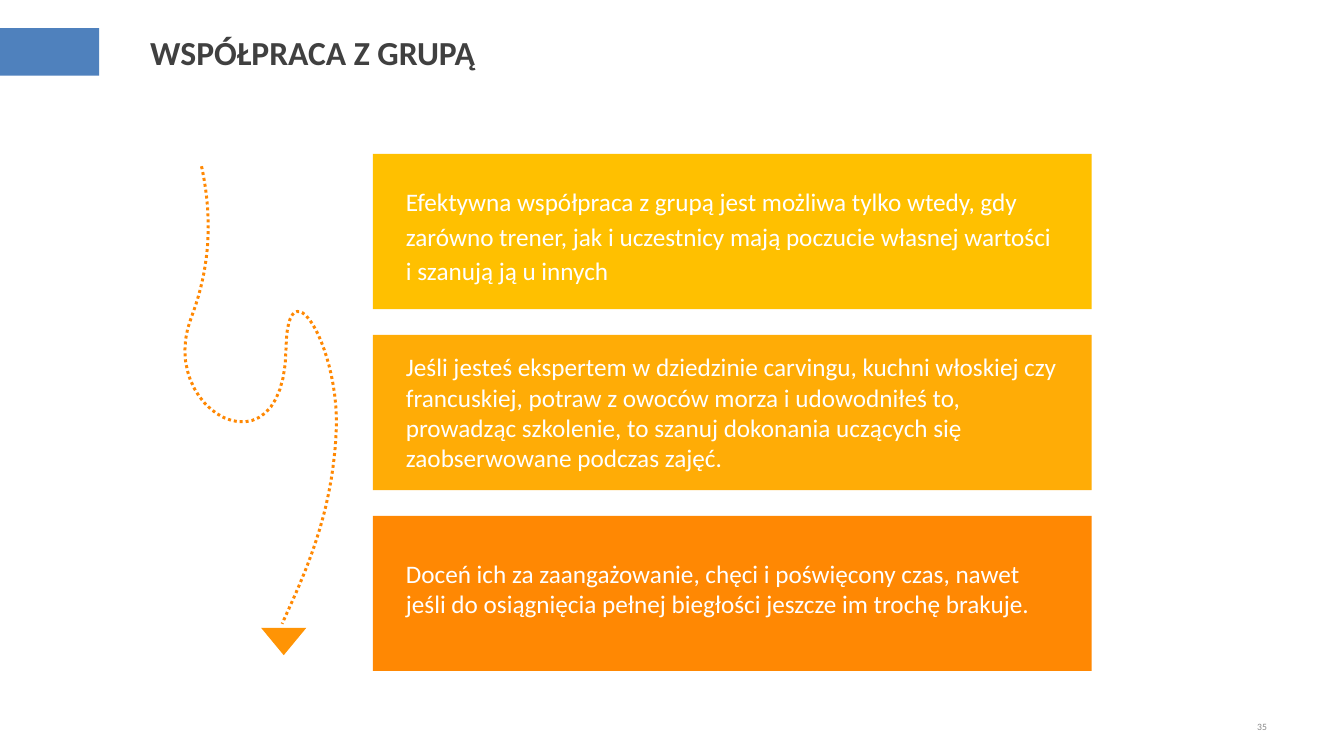
from dataclasses import dataclass

from pptx import Presentation
from pptx import util as u
from pptx.dml.color import RGBColor
from pptx.enum import dml, shapes, text


@dataclass(frozen=True)
class Theme:
    face: str = "Calibri"
    blue: str = "4F81BD"
    dark: str = "404040"
    gray: str = "898989"
    white: str = "FFFFFF"
    curve: str = "FF8803"
    tip: str = "FF9405"
    cards: tuple = ("FFC000", "FFAC06", "FF8803")
    head: int = 24
    body: int = 18
    small: int = 12


THEME = Theme()

NOTES = [
    (4.47, 2.84, 1.14, 6,
     "Efektywna współpraca z grupą jest możliwa tylko wtedy, gdy zarówno trener, "
     "jak i uczestnicy mają poczucie własnej wartości i szanują ją u innych"),
    (8.74, 3.33, 1.0, 12,
     "Jeśli jesteś ekspertem w dziedzinie carvingu, kuchni włoskiej czy francuskiej, "
     "potraw z owoców morza i udowodniłeś to, prowadząc szkolenie, to szanuj dokonania "
     "uczących się zaobserwowane podczas zajęć."),
    (13.94, 1.8, 1.0, 12,
     "Doceń ich za zaangażowanie, chęci i poświęcony czas, nawet jeśli do osiągnięcia "
     "pełnej biegłości jeszcze im trochę brakuje."),
]

START = (5.08, 4.19)
BENDS = [
    ((5.28, 5.11), (5.41, 6.45), (4.83, 7.98)),
    ((3.89, 10.34), (7.16, 12.14), (7.21, 8.79)),
    ((7.24, 6.6), (8.51, 8.64), (8.48, 10.72)),
    ((8.41, 13), (7.62, 14.58), (7.11, 15.72)),
]
STEPS = 24


def style(para, size, color, bold=False):
    font = para.font
    font.name = THEME.face
    font.size = u.Pt(size)
    font.bold = bold
    font.color.rgb = RGBColor.from_string(color)


def add_block(slide, kind, box, color):
    block = slide.shapes.add_shape(kind, *map(u.Cm, box))
    block.shadow.inherit = False
    block.fill.solid()
    block.fill.fore_color.rgb = RGBColor.from_string(color)
    block.line.fill.background()
    return block


def add_text(slide, box, words, size, color):
    frame = slide.shapes.add_textbox(*map(u.Cm, box)).text_frame
    frame.word_wrap = True
    para = frame.paragraphs[0]
    para.text = words
    style(para, size, color)
    return frame


def set_title(slide, box, words):
    title = slide.shapes.title
    title.left, title.top, title.width, title.height = map(u.Cm, box)
    frame = title.text_frame
    frame.vertical_anchor = text.MSO_ANCHOR.MIDDLE
    para = frame.paragraphs[0]
    para.text = words
    para.alignment = text.PP_ALIGN.LEFT
    style(para, THEME.head, THEME.dark, bold=True)


def add_note(slide, top, height, lead, after, words):
    frame = add_text(slide, (9.98, top, 16.94, height), words, THEME.body, THEME.white)
    frame.auto_size = text.MSO_AUTO_SIZE.SHAPE_TO_FIT_TEXT
    para = frame.paragraphs[0]
    para.line_spacing = lead
    para.space_after = u.Pt(after)


def add_number(slide, words):
    frame = add_text(slide, (24.28, 17.65, 7.9, 1.02), words, THEME.small, THEME.gray)
    frame.vertical_anchor = text.MSO_ANCHOR.MIDDLE
    para = frame.paragraphs[0]
    para.alignment = text.PP_ALIGN.RIGHT
    para.runs[0]._r.get_or_add_rPr().set("baseline", "-25000")


def bend(start, first, second, end):
    for step in range(1, STEPS + 1):
        t = step / STEPS
        s = 1 - t
        yield tuple(
            u.Cm(s**3 * a + 3 * s * s * t * b + 3 * s * t * t * c + t**3 * d)
            for a, b, c, d in zip(start, first, second, end)
        )


def add_curve(slide):
    path = slide.shapes.build_freeform(*map(u.Cm, START))
    start = START
    for first, second, end in BENDS:
        path.add_line_segments(bend(start, first, second, end), close=False)
        start = end
    curve = path.convert_to_shape()
    curve.shadow.inherit = False
    curve.fill.background()
    curve.line.color.rgb = RGBColor.from_string(THEME.curve)
    curve.line.width = u.Pt(2.13)
    curve.line.dash_style = dml.MSO_LINE.ROUND_DOT


def main():
    deck = Presentation()
    deck.slide_width, deck.slide_height = u.Cm(33.87), u.Cm(19.05)
    slide = deck.slides.add_slide(deck.slide_layouts[5])
    rect = shapes.MSO_SHAPE.RECTANGLE
    add_block(slide, rect, (0, 0.71, 2.5, 1.2), THEME.blue)
    set_title(slide, (3.53, 0.53, 15.21, 1.57), "WSPÓŁPRACA Z GRUPĄ")
    for row, color in enumerate(THEME.cards):
        add_block(slide, rect, (9.4, 3.88 + 4.56 * row, 18.11, 3.91), color)
    for note in NOTES:
        add_note(slide, *note)
    add_curve(slide)
    tip = add_block(slide, shapes.MSO_SHAPE.ISOSCELES_TRIANGLE,
                    (6.58, 15.82, 1.14, 0.69), THEME.tip)
    tip.rotation = 180
    add_number(slide, "35")
    deck.save("out.pptx")


if __name__ == "__main__":
    main()
